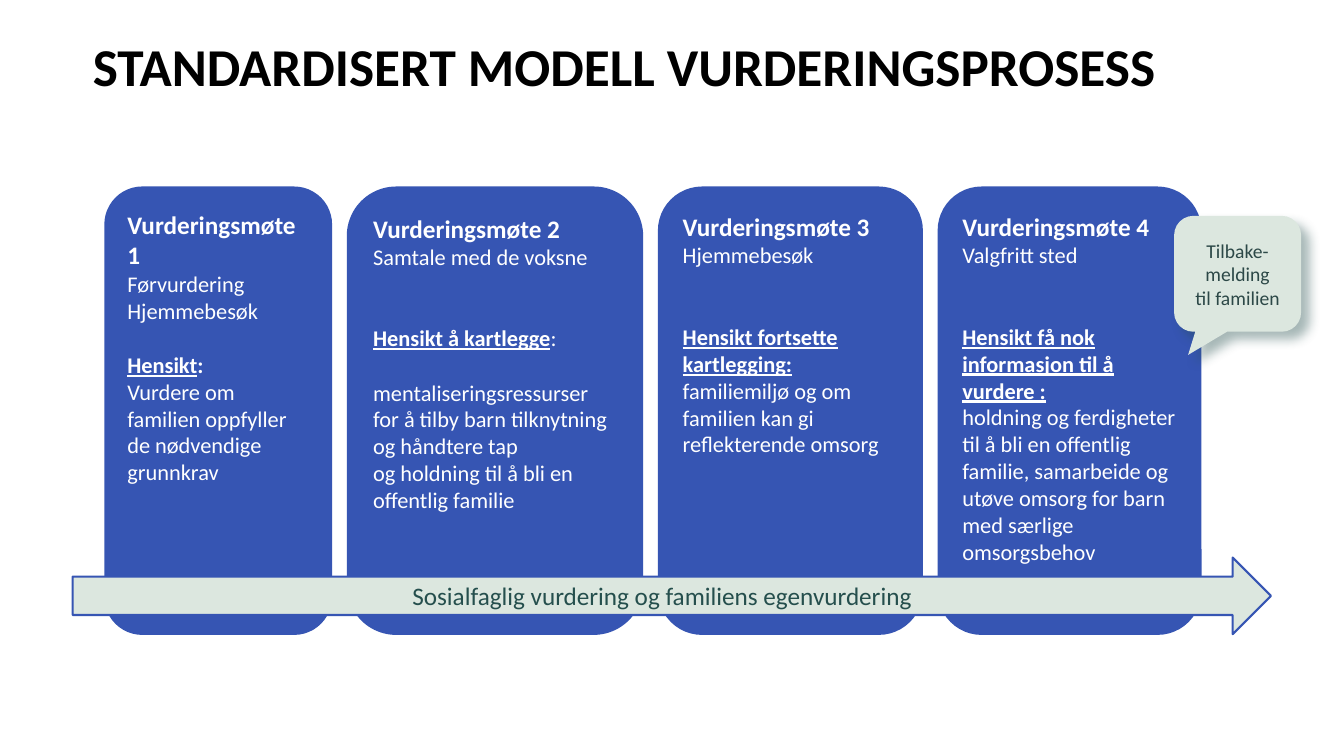
from lxml import etree
from pptx import Presentation
from pptx import util as u
from pptx.dml import color
from pptx.enum import shapes, text
from pptx.oxml import ns

COLORS = {"blue": "3655B3", "mint": "DCE7DF", "black": "000000", "white": "FFFFFF",
          "teal": "254F4D", "slate": "2C4847"}
LINE = 19.5  # height in points of one 16 pt line


def write(paragraph, words, size=16, hue="white", bold=False, underline=False,
          align=text.PP_ALIGN.LEFT, before=0):
    paragraph.alignment = align
    if before:
        paragraph.space_before = u.Pt(before)
    run = paragraph.add_run()
    run.text = words
    run.font.name = "Calibri"
    run.font.size = u.Pt(size)
    run.font.bold = bold
    run.font.underline = underline
    run.font.color.rgb = color.RGBColor.from_string(COLORS[hue])


def add_box(kind, left, top, width, height, fill, line=None):
    box = slide.shapes.add_shape(kind, u.Cm(left), u.Cm(top), u.Cm(width), u.Cm(height))
    box.shadow.inherit = False
    box.fill.solid()
    box.fill.fore_color.rgb = color.RGBColor.from_string(COLORS[fill])
    if line:
        box.line.color.rgb = color.RGBColor.from_string(COLORS[line])
        box.line.width = u.Pt(1.5)
    else:
        box.line.fill.background()
    box.text_frame.word_wrap = True
    return box


deck = Presentation()
deck.slide_width, deck.slide_height = u.Cm(33.87), u.Cm(19.05)
slide = deck.slides.add_slide(deck.slide_layouts[5])

# Title
title = slide.shapes.title
title.left, title.top, title.width, title.height = u.Cm(2.34), u.Cm(1.02), u.Cm(30.48), u.Cm(3.68)
heading = title.text_frame
heading.margin_left = heading.margin_right = heading.margin_top = heading.margin_bottom = 0
heading.vertical_anchor = text.MSO_ANCHOR.TOP
heading.word_wrap = True
heading.auto_size = text.MSO_AUTO_SIZE.NONE
heading.paragraphs[0].line_spacing = 0.9
write(heading.paragraphs[0], "STANDARDISERT MODELL VURDERINGSPROSESS", size=38, hue="black", bold=True)

# Four meetings: width, places, blank lines before the purpose, purpose, tail, body, lines before body
meetings = [
    (5.74, ["Førvurdering", "Hjemmebesøk"], 1, "Hensikt", ":",
     ["Vurdere om familien oppfyller de nødvendige grunnkrav"], 0),
    (7.47, ["Samtale\u00a0med de voksne".replace("\u00a0", " ")], 2, "Hensikt å kartlegge", ":",
     ["mentaliseringsressurser for å tilby barn tilknytning og håndtere tap",
      "og holdning til å bli en offentlig familie"], 1),
    (6.68, ["Hjemmebesøk"], 2, "Hensikt fortsette kartlegging:", "",
     ["familiemiljø og om familien kan gi reflekterende omsorg"], 0),
    (6.65, ["Valgfritt sted"], 2, "Hensikt få nok informasjon til å vurdere :", "",
     ["holdning og ferdigheter til å bli en offentlig familie, samarbeide og utøve "
      "omsorg for barn med særlige omsorgsbehov"], 0),
]
left, gap = 2.63, 0.37
for number, (width, places, skip, purpose, tail, body, body_skip) in enumerate(meetings, 1):
    meeting = add_box(shapes.MSO_SHAPE.ROUNDED_RECTANGLE, left, 4.7, width, 11.3, "blue")
    frame = meeting.text_frame
    frame.vertical_anchor = text.MSO_ANCHOR.TOP
    frame.margin_left = frame.margin_right = frame.margin_top = u.Cm(0.3)
    frame.margin_bottom = 0
    write(frame.paragraphs[0], f"Vurderingsmøte {number}", size=18, bold=True)
    for place in places:
        write(frame.add_paragraph(), place)
    aim = frame.add_paragraph()
    write(aim, purpose, bold=True, underline=True, before=skip * LINE)
    if tail:
        write(aim, tail, bold=number == 1)
    for index, sentence in enumerate(body):
        write(frame.add_paragraph(), sentence, before=0 if index else body_skip * LINE)
    left += width + gap

# Feedback callout with a soft shadow
feedback = add_box(shapes.MSO_SHAPE.ROUNDED_RECTANGULAR_CALLOUT, 29.59, 5.44, 3.2, 2.92, "mint")
feedback.adjustments[0], feedback.adjustments[1] = -0.39, 0.7
effects = feedback.fill._xPr.find(ns.qn("a:effectLst"))
shadow = etree.SubElement(effects, ns.qn("a:outerShdw"), blurRad=str(u.Pt(8)), dist=str(u.Pt(8)),
                          dir="2700000", algn="tl", rotWithShape="0")
tint = etree.SubElement(shadow, ns.qn("a:srgbClr"), val=COLORS["teal"])
etree.SubElement(tint, ns.qn("a:alpha"), val="40000")
feedback.text_frame.vertical_anchor = text.MSO_ANCHOR.MIDDLE
write(feedback.text_frame.paragraphs[0], "Tilbake-melding", size=14, hue="slate",
      align=text.PP_ALIGN.CENTER)
write(feedback.text_frame.add_paragraph(), "til familien", size=14, hue="slate",
      align=text.PP_ALIGN.CENTER)

# Arrow across all meetings
process = add_box(shapes.MSO_SHAPE.RIGHT_ARROW, 1.83, 14.05, 30.2, 1.93, "mint", line="blue")
process.text_frame.vertical_anchor = text.MSO_ANCHOR.MIDDLE
write(process.text_frame.paragraphs[0], "Sosialfaglig vurdering og familiens egenvurdering",
      size=18, hue="teal", align=text.PP_ALIGN.CENTER)

deck.save("out.pptx")
